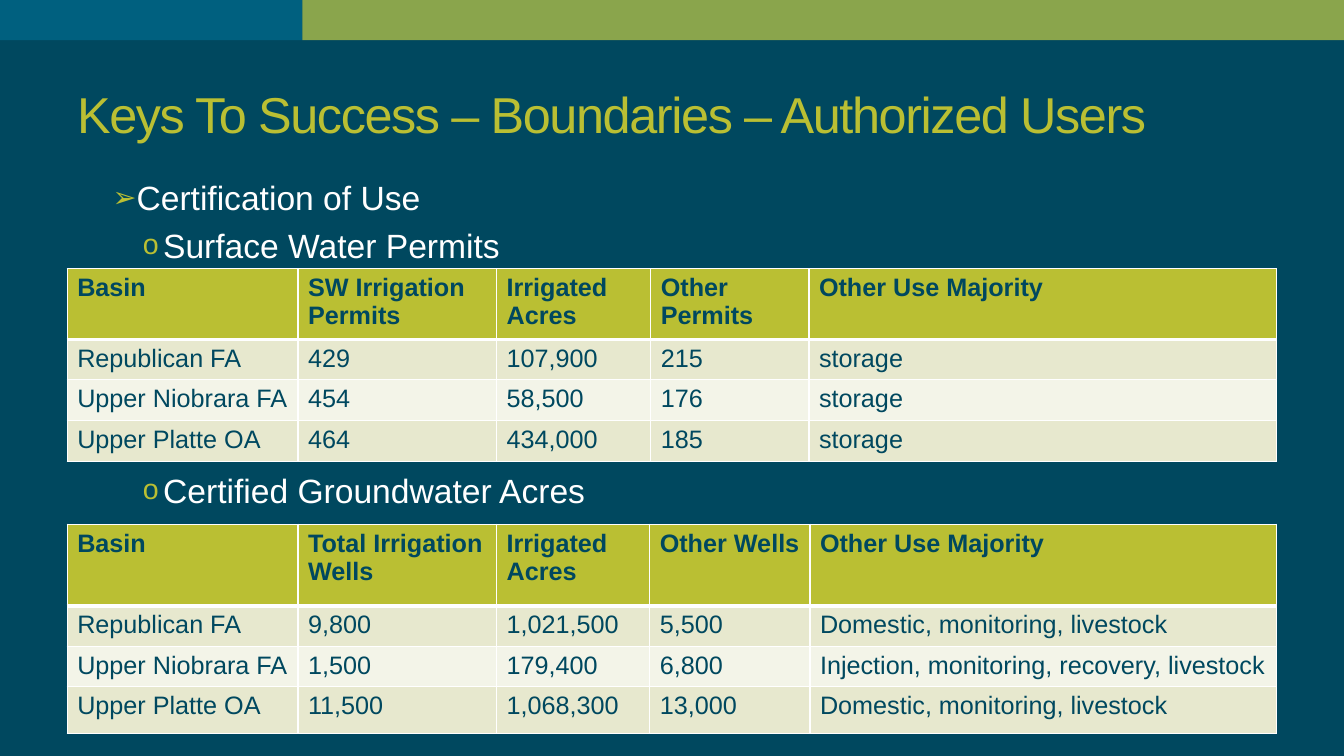
import lxml.etree
import pptx
import pptx.dml.color
import pptx.enum.shapes
import pptx.enum.text
import pptx.oxml.ns
import pptx.util

RGB = pptx.dml.color.RGBColor
NAVY = RGB(0x00, 0x48, 0x5F)
TEAL = RGB(0x00, 0x60, 0x7F)
LIME = RGB(0xC6, 0xCD, 0x44)
OLIVE = RGB(0xBA, 0xBF, 0x33)
SAGE = RGB(0xE7, 0xE8, 0xCE)
CREAM = RGB(0xF3, 0xF4, 0xE8)
WHITE = RGB(0xFF, 0xFF, 0xFF)
FONT = "Arial"

WIDE, HIGH = 40, 22.5
EDGE = 2
SPAN = WIDE - 2 * EDGE
BAR = 1.2
SPLIT = 9
LIST = 3.06
STEP = 0.6

PERMITS = [
    ["Basin", "SW Irrigation Permits", "Irrigated Acres", "Other Permits", "Other Use Majority"],
    ["Republican FA", "429", "107,900", "215", "storage"],
    ["Upper Niobrara FA", "454", "58,500", "176", "storage"],
    ["Upper Platte OA", "464", "434,000", "185", "storage"],
]
WELLS = [
    ["Basin", "Total Irrigation Wells", "Irrigated Acres", "Other Wells", "Other Use Majority"],
    ["Republican FA", "9,800", "1,021,500", "5,500", "Domestic, monitoring, livestock"],
    ["Upper Niobrara FA", "1,500", "179,400", "6,800", "Injection, monitoring, recovery, livestock"],
    ["Upper Platte OA", "11,500", "1,068,300", "13,000", "Domestic, monitoring, livestock"],
]


def grid(*units):
    return [pptx.util.Inches(unit / 3) for unit in units]


def node(root, tag, **attrs):
    item = lxml.etree.SubElement(root, pptx.oxml.ns.qn(tag))
    for name, value in attrs.items():
        item.set(name, str(value))
    return item


def style(para, size, color, bold=False):
    for run in para.runs:
        run.font.name = FONT
        run.font.size = pptx.util.Pt(size)
        run.font.bold = bold
        run.font.color.rgb = color


def add_bar(slide, left, width, color, alpha=None):
    bar = slide.shapes.add_shape(
        pptx.enum.shapes.MSO_SHAPE.RECTANGLE, *grid(left, 0, width, BAR))
    bar.shadow.inherit = False
    bar.fill.solid()
    bar.fill.fore_color.rgb = color
    bar.line.fill.background()
    if alpha:
        tint = bar.fill._xPr.find(".//" + pptx.oxml.ns.qn("a:srgbClr"))
        node(tint, "a:alpha", val=alpha * 1000)


def add_box(slide, left, top, width, height):
    frame = slide.shapes.add_textbox(*grid(left, top, width, height)).text_frame
    frame.word_wrap = True
    return frame


def add_title(slide, text):
    frame = add_box(slide, EDGE, 1.75, SPAN, 3.25)
    frame.vertical_anchor = pptx.enum.text.MSO_ANCHOR.MIDDLE
    para = frame.paragraphs[0]
    para.text = text
    style(para, 36, OLIVE)
    para.runs[0].font._element.set("spc", "-100")


def add_list(slide, top, items):
    frame = add_box(slide, LIST, top, WIDE - EDGE - LIST, 1.45 * len(items))
    for index, (level, mark, text) in enumerate(items):
        para = frame.paragraphs[0] if index == 0 else frame.add_paragraph()
        para.text = text
        para.level = level
        if index:
            para.space_before = pptx.util.Pt(5)
        props = para._p.get_or_add_pPr()
        inset, = grid(STEP + 1.5 * STEP * level)
        hang, = grid(STEP)
        props.set("marL", str(inset))
        props.set("indent", str(-hang))
        node(node(props, "a:buClr"), "a:srgbClr", val=OLIVE)
        node(props, "a:buSzPct", val=85000)
        node(props, "a:buFont", typeface=FONT)
        node(props, "a:buChar", char=mark)
        style(para, 24, WHITE)


def add_edges(cell, row):
    props = cell._tc.get_or_add_tcPr()
    sizes = {"L": 1, "R": 1, "T": 3 if row == 1 else 1, "B": 3 if row == 0 else 1}
    for side, size in sizes.items():
        line = node(props, "a:ln" + side, w=pptx.util.Pt(size))
        node(node(line, "a:solidFill"), "a:srgbClr", val=WHITE)


def add_table(slide, top, cols, rows, data):
    table = slide.shapes.add_table(
        len(rows), len(cols), *grid(EDGE, top, SPAN, sum(rows))).table
    for column, width in zip(table.columns, grid(*cols)):
        column.width = width
    for line, height in zip(table.rows, grid(*rows)):
        line.height = height
    for row, words in enumerate(data):
        for col, word in enumerate(words):
            cell = table.cell(row, col)
            cell.text_frame.text = word
            style(cell.text_frame.paragraphs[0], 18, NAVY, row == 0)
            add_edges(cell, row)
            cell.fill.solid()
            cell.fill.fore_color.rgb = OLIVE if row == 0 else SAGE if row % 2 else CREAM


def main():
    deck = pptx.Presentation()
    deck.slide_width, deck.slide_height = grid(WIDE, HIGH)
    slide = deck.slides.add_slide(deck.slide_layouts[6])
    slide.background.fill.solid()
    slide.background.fill.fore_color.rgb = NAVY
    add_bar(slide, 0, SPLIT, TEAL)
    add_bar(slide, SPLIT, WIDE - SPLIT, LIME, 70)
    add_title(slide, "Keys To Success – Boundaries – Authorized Users")
    add_list(slide, 5.13, [(0, "➢", "Certification of Use"),
                           (1, "o", "Surface Water Permits")])
    add_table(slide, 8, [6.87, 5.91, 4.59, 4.71, 13.92],
              [2, 1.14, 1.14, 1.23], PERMITS)
    add_list(slide, 13.83, [(1, "o", "Certified Groundwater Acres")])
    add_table(slide, 15.6, [6.87, 5.91, 4.56, 4.77, 13.89],
              [2.43, 1.14, 1.14, 1.41], WELLS)
    deck.save("out.pptx")


if __name__ == "__main__":
    main()
